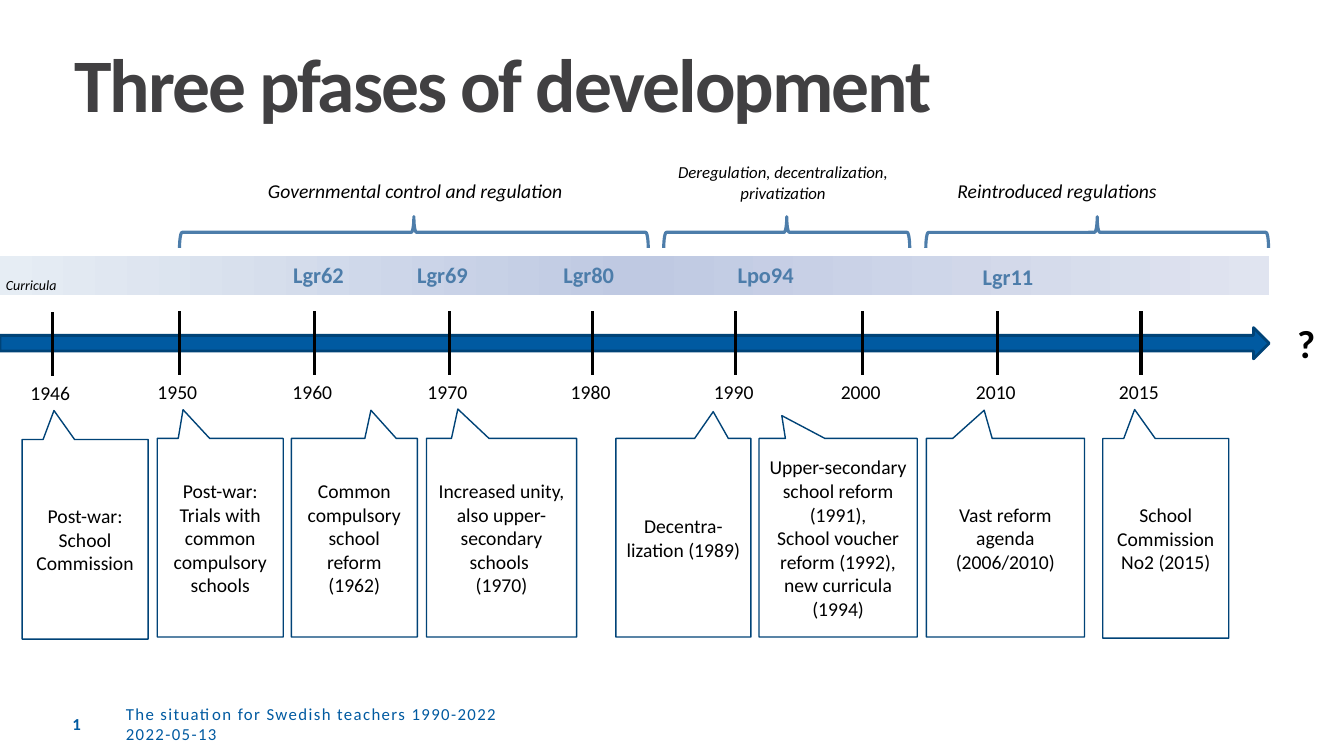
from copy import deepcopy
from pptx import Presentation
from pptx.dml.color import RGBColor as RGB
from pptx.enum.shapes import MSO_CONNECTOR as LINE, MSO_SHAPE as SHAPE
from pptx.enum.text import MSO_ANCHOR as ANCHOR, MSO_AUTO_SIZE as AUTO, PP_ALIGN as ALIGN
from pptx.oxml.ns import qn
from pptx.oxml.xmlchemy import OxmlElement as Element
from pptx.util import Pt

HUES = {"ink": "000000", "title": "414042", "blue": "005AA1", "navy": "004377",
        "steel": "4D7DAA", "white": "FFFFFF",
        "pale": "E6EDF4", "mid": "BFC9E2", "end": "E0E4F0"}

# Text formats: font attributes, plus hue and letter spacing in points
TITLE = {"size": Pt(54), "bold": True, "hue": "title", "spc": -1.5}
BODY = {"size": Pt(14)}
PHASE = {"size": Pt(14), "italic": True}
SMALL = {"size": Pt(12), "italic": True}
TINY = {"size": Pt(10), "italic": True}
PLAN = {"size": Pt(16), "bold": True, "hue": "steel"}
MARK = {"size": Pt(28), "bold": True}
FOOT = {"size": Pt(12), "hue": "blue", "spc": 1}
PAGE = {"size": Pt(12), "bold": True, "hue": "blue"}

# Brace left, width; label left, top, width, height, text, format
PHASES = [
    (128.2, 334.8, 184.3, 124.6, 226.8, 24.5, "Governmental control and regulation", PHASE),
    (474.1, 175.7, 476.6, 112.3, 165.6, 36,
     "Deregulation, decentralization,\nprivatization", SMALL),
    (661.3, 244.8, 676.8, 124.6, 222.5, 24.5, "Reintroduced regulations", PHASE),
]
# Left, drop, width, name
PLANS = [(202.3, 0, 51.1, "Lgr62"), (290.9, 0, 51.1, "Lgr69"), (395.3, 0, 51.1, "Lgr80"),
         (519.8, 0, 55.4, "Lpo94"), (694.8, 1.4, 51.1, "Lgr11")]
# Tick position, drop, year
YEARS = [(37.4, 0.7, 1946), (128.2, 0, 1950), (224.6, 0, 1960), (321.1, 0, 1970),
         (423.4, 0, 1980), (525.6, 0, 1990), (616.3, 0, 2000), (712.8, 0, 2010),
         (815, 0, 2015)]
# Left, drop, width, height, pointer tip, paragraphs
EVENTS = [
    (15.8, 0.7, 90, 142.6, (-0.247, -0.645), ["Post-war: School Commission"]),
    (112.3, 0, 90, 141.8, (-0.295, -0.645),
     ["Post-war: Trials with common compulsory schools"]),
    (208.1, 0, 90, 141.8, (0.132, -0.642), ["Common compulsory school reform (1962)"]),
    (304.6, 0, 107.3, 141.8, (-0.291, -0.648),
     ["Increased unity, also upper-secondary schools \n(1970)"]),
    (439.9, 0, 96.5, 141.8, (0.221, -0.635), ["Decentra-lization (1989)"]),
    (542.2, 0, 113, 141.8, (-0.356, -0.615),
     ["Upper-secondary school reform (1991),",
      "School voucher reform (1992), new curricula (1994)"]),
    (661.7, 0, 113, 141.8, (-0.134, -0.642), ["Vast reform agenda (2006/2010)"]),
    (787.7, 0, 90, 142.6, (-0.247, -0.645), ["School Commission No2 (2015)"]),
]


def pts(*nums):
    return [Pt(n) for n in nums]


def rgb(hue):
    return RGB.from_string(HUES[hue])


def write(frame, paras, style, align=None):
    for n, text in enumerate(paras):
        para = frame.add_paragraph() if n else frame.paragraphs[0]
        para.text = text
        para.alignment = align
        for run in para.runs:
            run.font.name = "Calibri"
            run.font.color.rgb = rgb(style.get("hue", "ink"))
            for key, val in style.items():
                if key == "spc":
                    run.font._element.set("spc", str(int(val * 100)))
                elif key != "hue":
                    setattr(run.font, key, val)


def label(slide, box, text, style, align=None, wrap=False):
    frame = slide.shapes.add_textbox(*pts(*box)).text_frame
    frame.word_wrap = wrap
    frame.auto_size = AUTO.NONE if wrap else AUTO.SHAPE_TO_FIT_TEXT
    write(frame, [text], style, align)
    return frame


def draw(slide, kind, box, fill=None, line=None, width=1):
    shape = slide.shapes.add_shape(kind, *pts(*box))
    shape.shadow.inherit = False
    if fill:
        shape.fill.solid()
        shape.fill.fore_color.rgb = rgb(fill)
    else:
        shape.fill.background()
    if line:
        shape.line.color.rgb = rgb(line)
        shape.line.width = Pt(width)
    else:
        shape.line.fill.background()
    return shape


def header(slide, box):
    frame = label(slide, box, "Three pfases of development", TITLE, wrap=True)
    for side in ("left", "right", "top", "bottom"):
        setattr(frame, f"margin_{side}", 0)
    frame.paragraphs[0].line_spacing = Pt(54)


def phases(slide, top, high):
    for x, wide, *box, text, style in PHASES:
        # A left brace turned a quarter, so its sides are swapped
        spot = (x + (wide - high) / 2, top + (high - wide) / 2, high, wide)
        draw(slide, SHAPE.LEFT_BRACE, spot, line="steel", width=2.25).rotation = 90
        label(slide, box, text, style, ALIGN.CENTER if "\n" in text else None)


def plans(slide, box):
    left, top, _, high = box
    band = draw(slide, SHAPE.RECTANGLE, box)
    band.fill.gradient()
    band.fill.gradient_angle = 0
    stops = band._element.spPr.find(qn("a:gradFill")).find(qn("a:gsLst"))
    stops.insert(1, deepcopy(stops[0]))
    for stop, hue, pos in zip(band.fill.gradient_stops, ("pale", "mid", "end"), (0, 0.5, 1)):
        stop.color.rgb = rgb(hue)
        stop.position = pos
    for x, drop, wide, name in PLANS:
        label(slide, (left + x, top + drop, wide, 26.6), name, PLAN)
    label(slide, (left - 2.9, top + 10.8, 51.1, 19.4), "Curricula", TINY)


def years(slide, box):
    left, top, wide, high = box
    draw(slide, SHAPE.RIGHT_ARROW, box, "blue", "navy", 2)
    for x, drop, year in YEARS:
        x, start = left + x, top - 11.5 + drop
        foot = start + 45.3
        tick = slide.shapes.add_connector(LINE.STRAIGHT, *pts(x, start, x, foot))
        tick.line.color.rgb = rgb("ink")
        tick.line.width = Pt(2.25)
        tick._element.spPr.append(Element("a:effectLst"))
        label(slide, (x - 22.8, foot, 43.2, 24.5), str(year), BODY)
    label(slide, (left + wide + 13, top - 9.4, 27.4, 41), "?", MARK)


def events(slide, top):
    for x, drop, wide, high, tip, paras in EVENTS:
        box = (x, top + drop, wide, high)
        note = draw(slide, SHAPE.RECTANGULAR_CALLOUT, box, "white", "navy")
        for n, val in enumerate(tip):
            note.adjustments[n] = val
        note.text_frame.word_wrap = True
        note.text_frame.vertical_anchor = ANCHOR.MIDDLE
        write(note.text_frame, paras, BODY, ALIGN.CENTER)


def footer(slide, top, high):
    parts = [(44.6, 59.8, "1", PAGE),
             (82.8, 357.8, "The situation for Swedish teachers 1990-2022\n2022-05-13", FOOT)]
    for x, wide, text, style in parts:
        frame = label(slide, (x, top, wide, high), text, style, wrap=True)
        frame.vertical_anchor = ANCHOR.MIDDLE


def main():
    deck = Presentation()
    deck.slide_width, deck.slide_height = pts(960, 540)
    slide = deck.slides.add_slide(deck.slide_layouts[6])
    header(slide, (53.3, 37.4, 853.2, 65.5))
    phases(slide, 154.8, 22.3)
    plans(slide, (0, 182.9, 906.5, 28.1))
    years(slide, (0, 234, 906.5, 22.3))
    events(slide, 313.2)
    footer(slide, 502.6, 28.8)
    deck.save("out.pptx")


if __name__ == "__main__":
    main()
